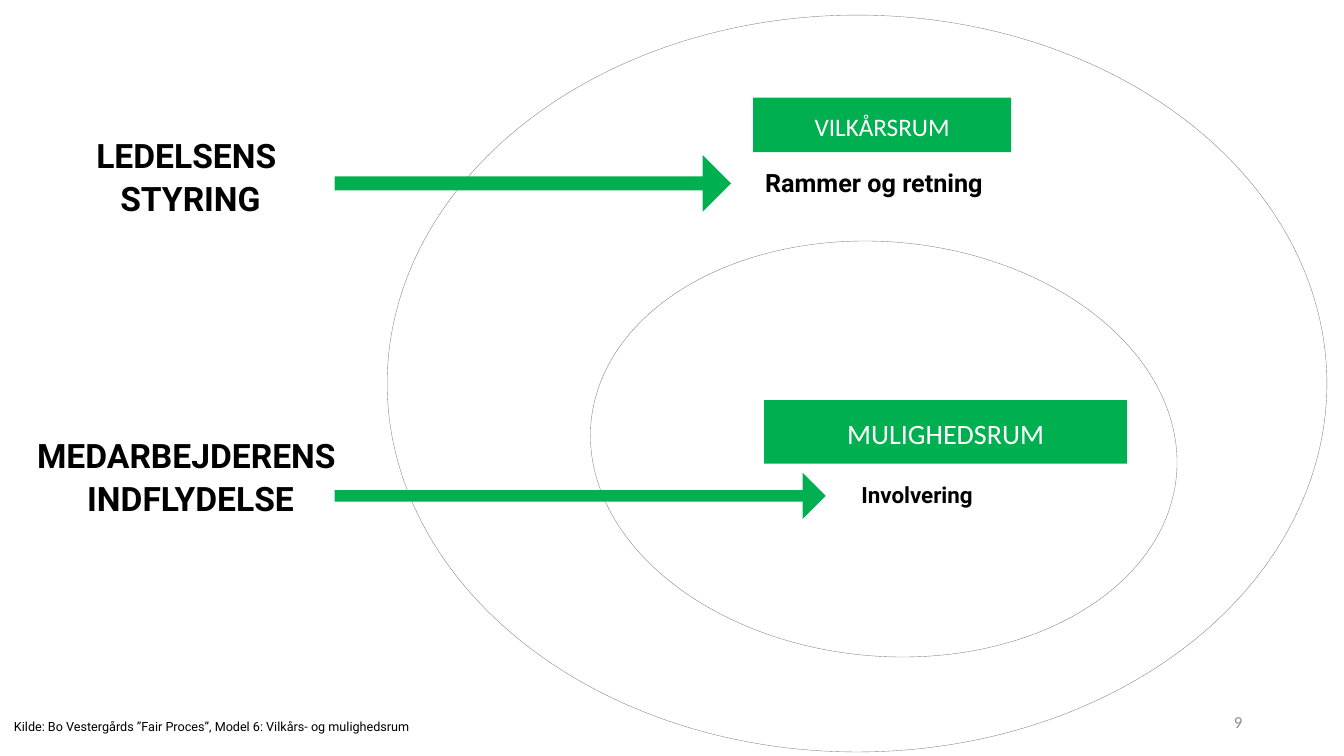
from pptx import Presentation
from pptx.dml.color import RGBColor
from pptx.enum import shapes, text
from pptx.util import Inches, Pt

GREEN, WHITE, BLACK, GREY, LIGHT_GREY = "00B050", "FFFFFF", "000000", "808080", "8C8C8C"
LEFT, CENTER, RIGHT = text.PP_ALIGN.LEFT, text.PP_ALIGN.CENTER, text.PP_ALIGN.RIGHT
TOP, MIDDLE = text.MSO_ANCHOR.TOP, text.MSO_ANCHOR.MIDDLE

# Content: boxes are left, top, width, height in inches
PAGE_NUMBER = ("9", (9.42, 6.95, 3, 0.4))
ROOMS = [  # box, rotation
    ((3.84, 0.15, 9.32, 7.31), 0),
    ((5.85, 2.4, 5.83, 4.11), 5.2),
]
ROOM_NAMES = [  # wording, box, size
    ("MULIGHEDSRUM", (7.58, 3.97, 3.6, 0.63), 20),
    ("VILKÅRSRUM", (7.47, 0.97, 2.56, 0.54), 18),
]
LABELS = [  # lines, box, size, bold, alignment
    (["MEDARBEJDERENS ", "INDFLYDELSE"], (-0.35, 4.24, 4.48, 1.24), 24, True, CENTER),
    (["LEDELSENS ", "STYRING"], (0.46, 1.26, 2.86, 1), 24, True, CENTER),
    (["Rammer og retning"], (7.49, 1.59, 3.96, 0.94), 18, True, LEFT),
    (["Involvering"], (7.47, 4.71, 3.25, 0.63), 16, True, CENTER),
    (["Kilde: Bo Vestergårds ”Fair Proces”, Model 6: Vilkårs- og mulighedsrum"],
     (0.04, 7.07, 12.55, 0.57), 9, False, LEFT),
]
ARROWS = [(3.32, 1.54, 3.93, 0.56), (3.32, 4.69, 4.87, 0.46)]

presentation = Presentation()
presentation.slide_width, presentation.slide_height = Inches(13.33), Inches(7.5)
slide = presentation.slides.add_slide(presentation.slide_layouts[6])


def color(value):
    return RGBColor.from_string(value)


def add_shape(kind, box, fill, line=None):
    shape = slide.shapes.add_shape(kind, *map(Inches, box))
    shape.shadow.inherit = False
    shape.fill.solid()
    shape.fill.fore_color.rgb = color(fill)
    if line:
        shape.line.color.rgb = color(line)
        shape.line.width = Pt(0.25)
    else:
        shape.line.fill.background()
    return shape


def write(shape, lines, size, font, ink, align=CENTER, anchor=MIDDLE, bold=False):
    frame = shape.text_frame
    frame.word_wrap = True
    frame.vertical_anchor = anchor
    paragraph = frame.paragraphs[0]
    paragraph.alignment = align
    paragraph.line_spacing = 1.07
    paragraph.space_after = Pt(8)
    for index, line in enumerate(lines):
        if index:
            paragraph.add_line_break()
        run = paragraph.add_run()
        run.text = line
        run.font.size, run.font.name, run.font.bold = Pt(size), font, bold
        run.font.color.rgb = color(ink)


def add_text(box, *details, **options):
    write(slide.shapes.add_textbox(*map(Inches, box)), *details, **options)


# Page number
number, number_box = PAGE_NUMBER
add_text(number_box, [number], 12, "Calibri", LIGHT_GREY, align=RIGHT)

# Nested rooms
for box, rotation in ROOMS:
    add_shape(shapes.MSO_SHAPE.OVAL, box, WHITE, GREY).rotation = rotation

# Room names
for name, box, size in ROOM_NAMES:
    write(add_shape(shapes.MSO_SHAPE.RECTANGLE, box, GREEN), [name], size, "Calibri", WHITE)

# Labels and source
for lines, box, size, bold, align in LABELS:
    add_text(box, lines, size, "Roboto", BLACK, align=align, anchor=TOP, bold=bold)

# Arrows into the rooms
for box in ARROWS:
    arrow = add_shape(shapes.MSO_SHAPE.RIGHT_ARROW, box, GREEN)
    arrow.adjustments[0], arrow.adjustments[1] = 0.25, 0.5

presentation.save("out.pptx")
